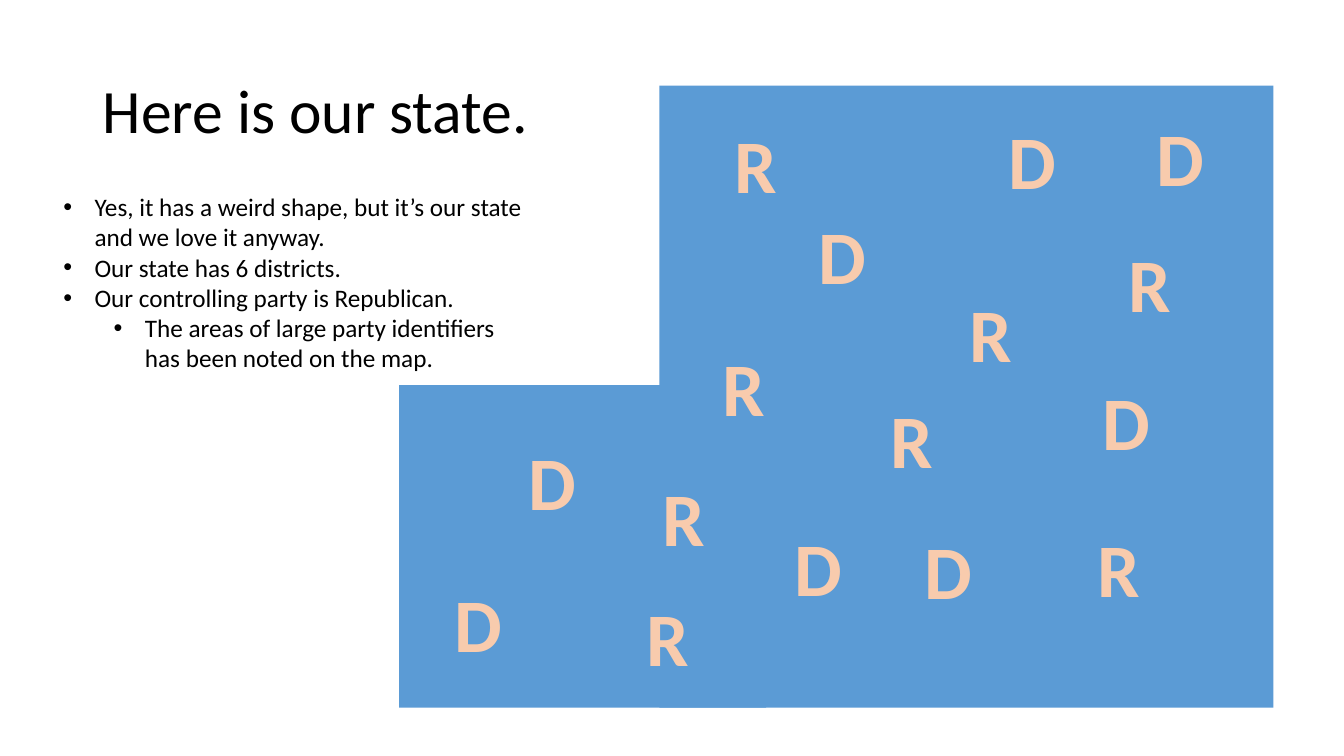
"""Build the slide that shows a state map with its party areas."""
from lxml import etree
from pptx import Presentation
from pptx.dml.color import RGBColor
from pptx.enum.shapes import MSO_SHAPE
from pptx.enum.text import MSO_ANCHOR, MSO_AUTO_SIZE, PP_ALIGN
from pptx.oxml.ns import qn
from pptx.util import Pt

RECTANGLE = MSO_SHAPE.RECTANGLE
MIDDLE = MSO_ANCHOR.MIDDLE
GROW = MSO_AUTO_SIZE.SHAPE_TO_FIT_TEXT
LEFT, CENTER = PP_ALIGN.LEFT, PP_ALIGN.CENTER

SCALE = 9144
SLIDE_SIZE = (1333, 750)
FONT = "Calibri"
BLACK, BLUE, PEACH, ORANGE = "000000", "5B9BD5", "F8CBAD", "ED7D31"

TITLE = "Here is our state."
TITLE_BOX = (92, 40, 1150, 145)
FACTS = [
    (0, "Yes, it has a weird shape, but it’s our state and we love it anyway."),
    (0, "Our state has 6 districts."),
    (0, "Our controlling party is Republican."),
    (1, "The areas of large party identifiers has been noted on the map."),
]
FACTS_BOX = (53, 185, 477, 192)
BULLET_INDENT, LEVEL_STEP = 31, 50
STATE_PARTS = [(654, 85, 609, 617), (396, 382, 364, 320)]
LETTER_WIDTHS = {"R": 63, "D": 68}
LETTER_HEIGHT = 101
PARTY_AREAS = {
    "R": [(706, 333), (718, 112), (1109, 230), (631, 581),
          (1078, 513), (951, 280), (873, 385), (647, 462)],
    "D": [(514, 427), (907, 515), (1083, 367), (440, 567),
          (990, 108), (801, 202), (778, 512), (1137, 105)],
}
TITLE_FORMAT = {"size": Pt(44), "name": FONT, "bold": False}
FACT_FORMAT = {"size": Pt(18), "name": FONT}
LETTER_FORMAT = {"size": Pt(54), "name": FONT, "bold": True}


def emu(*lengths):
    """Turn px lengths into EMU."""
    return [length * SCALE for length in lengths]


def color(hex_value):
    """Turn a hex string into a colour."""
    return RGBColor.from_string(hex_value)


def write(para, text, formats, hex_value):
    """Add a formatted run to a paragraph."""
    span = para.add_run()
    span.text = text
    for name, value in formats.items():
        setattr(span.font, name, value)
    span.font.color.rgb = color(hex_value)
    return span


def add_title(page):
    """Place and write the title."""
    title = page.shapes.title
    title.left, title.top, title.width, title.height = emu(*TITLE_BOX)
    title.text_frame.vertical_anchor = MIDDLE
    para = title.text_frame.paragraphs[0]
    para.alignment, para.line_spacing = LEFT, 0.9
    write(para, TITLE, TITLE_FORMAT, BLACK)


def add_text_box(page, place, wrap):
    """Add a text box that grows with its text."""
    frame = page.shapes.add_textbox(*emu(*place)).text_frame
    frame.word_wrap, frame.auto_size = wrap, GROW
    return frame


def add_facts(page):
    """Add the bulleted facts."""
    frame = add_text_box(page, FACTS_BOX, True)
    for index, (level, text) in enumerate(FACTS):
        para = frame.add_paragraph() if index else frame.paragraphs[0]
        para.level = level
        write(para, text, FACT_FORMAT, BLACK)
        margin, indent = emu(BULLET_INDENT + level * LEVEL_STEP, -BULLET_INDENT)
        properties = para._p.get_or_add_pPr()
        properties.set("marL", str(margin))
        properties.set("indent", str(indent))
        etree.SubElement(properties, qn("a:buFont"), typeface="Arial")
        etree.SubElement(properties, qn("a:buChar"), char="•")


def add_state(page):
    """Add the state as a group of two rectangles."""
    state = page.shapes.add_group_shape()
    for place in STATE_PARTS:
        part = state.shapes.add_shape(RECTANGLE, *emu(*place))
        part.shadow.inherit = False
        part.fill.solid()
        part.fill.fore_color.rgb = color(BLUE)
        part.line.fill.background()


def outline(span):
    """Give a run an orange outline."""
    line = etree.Element(qn("a:ln"), w=str(Pt(1.75)))
    fill = etree.SubElement(line, qn("a:solidFill"))
    etree.SubElement(fill, qn("a:srgbClr"), val=ORANGE)
    span.font._element.insert(0, line)


def add_letters(page):
    """Add the party letters to the map."""
    for letter, corners in PARTY_AREAS.items():
        for corner in corners:
            place = (*corner, LETTER_WIDTHS[letter], LETTER_HEIGHT)
            para = add_text_box(page, place, False).paragraphs[0]
            para.alignment = CENTER
            outline(write(para, letter, LETTER_FORMAT, PEACH))


def main():
    """Build and save the deck."""
    deck = Presentation()
    deck.slide_width, deck.slide_height = emu(*SLIDE_SIZE)
    page = deck.slides.add_slide(deck.slide_layouts[5])
    add_title(page)
    add_facts(page)
    add_state(page)
    add_letters(page)
    deck.save("out.pptx")


if __name__ == "__main__":
    main()
